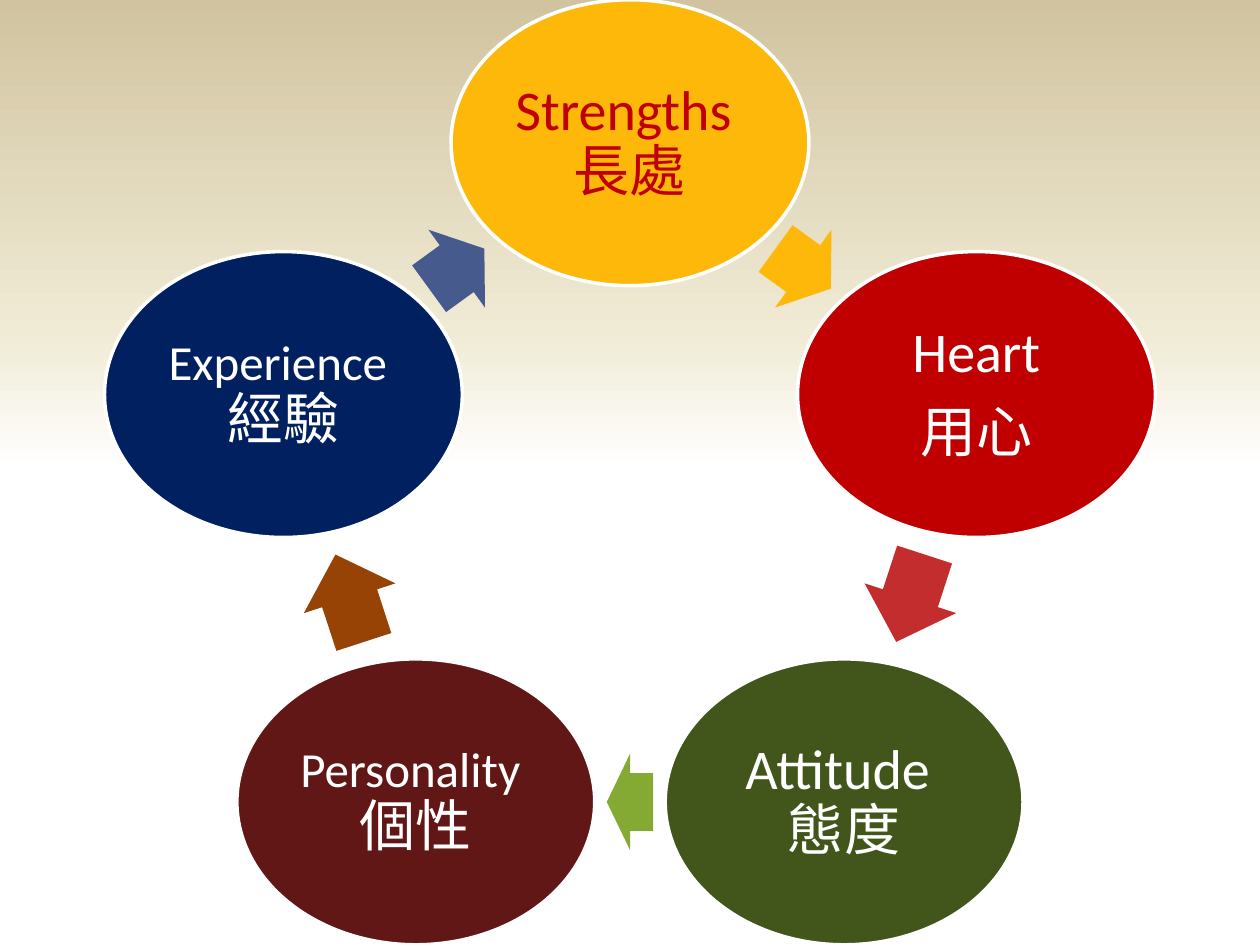
from copy import deepcopy
from math import cos, radians, sin

from pptx import Presentation
from pptx import util as u
from pptx.dml.color import RGBColor
from pptx.enum import shapes, text
from pptx.oxml.ns import qn

# Ring of five ovals, in points
MID_X, MID_Y, RADIUS = 360, 289.8, 208.2
OVAL_W, OVAL_H = 204.5, 163.4
ARROW_H = 55
STEP = 72

# Fill, text colour, paragraphs of lines, each line with its size
OVALS = [
    ("FEB80A", "C00000", [[("Strengths ", 32), ("長處", 32)]]),
    ("C00000", "FFFFFF", [[("Heart", 32)], [("用心", 32)]]),
    ("42551A", "FFFFFF", [[("Attitude ", 32), ("態度", 32)]]),
    ("621717", "FFFFFF", [[("Personality ", 28), ("個性", 32)]]),
    ("002060", "FFFFFF", [[("Experience ", 28), ("經驗", 32)]]),
]
# Fill and length of the arrow after each oval
ARROWS = [("FEB80A", 39), ("C32D2E", 52.5), ("84AA33", 26.5),
          ("964305", 52.5), ("475A8D", 39)]
STOPS = [(0.5, "FFFFFF"), (0.65, "F0EBD5"), (1, "D1C39F")]


def paint(color, code):
    color.rgb = RGBColor.from_string(code)


def add_back(slide):
    fill = slide.background.fill
    fill.gradient()
    fill.gradient_angle = 90
    # The default gradient has two stops; a third is needed
    stops = slide.element.find(".//" + qn("a:gsLst"))
    stops.append(deepcopy(stops[-1]))
    for stop, (place, code) in zip(fill.gradient_stops, STOPS):
        stop.position = place
        paint(stop.color, code)


def add_form(slide, kind, x, y, wide, high, code):
    """Add a plain filled shape centred on x, y."""
    form = slide.shapes.add_shape(
        kind, u.Pt(x - wide / 2), u.Pt(y - high / 2), u.Pt(wide), u.Pt(high))
    form.shadow.inherit = False
    form.fill.solid()
    paint(form.fill.fore_color, code)
    return form


def add_text(form, paras, code):
    frame = form.text_frame
    frame.word_wrap = True
    frame.vertical_anchor = text.MSO_ANCHOR.MIDDLE
    frame.margin_left = frame.margin_right = u.Pt(3)
    frame.margin_top = frame.margin_bottom = u.Pt(3)
    for i, lines in enumerate(paras):
        para = frame.add_paragraph() if i else frame.paragraphs[0]
        para.alignment = text.PP_ALIGN.CENTER
        para.line_spacing = 0.9
        para.space_after = u.Pt(11)
        for j, (words, size) in enumerate(lines):
            if j:
                para.add_line_break()
            run = para.add_run()
            run.text = words
            run.font.size = u.Pt(size)
            run.font.name = "Calibri"
            paint(run.font.color, code)


def add_oval(slide, x, y, code, ink, paras):
    oval = add_form(slide, shapes.MSO_SHAPE.OVAL, x, y, OVAL_W, OVAL_H, code)
    paint(oval.line.color, "FFFFFF")
    oval.line.width = u.Pt(2)
    add_text(oval, paras, ink)


def add_arrow(slide, x, y, turn, code, wide):
    arrow = add_form(slide, shapes.MSO_SHAPE.RIGHT_ARROW, x, y, wide, ARROW_H, code)
    arrow.line.fill.background()
    arrow.adjustments[0] = 0.6
    arrow.adjustments[1] = 0.5
    arrow.rotation = turn


def spot(i):
    """Centre of oval i, clockwise from the top."""
    angle = radians(STEP * i)
    return MID_X + RADIUS * sin(angle), MID_Y - RADIUS * cos(angle)


def main():
    deck = Presentation()
    deck.slide_width, deck.slide_height = u.Pt(720), u.Pt(540)
    slide = deck.slides.add_slide(deck.slide_layouts[6])
    add_back(slide)

    # Each oval is followed by an arrow halfway to the next one
    for i, (oval, arrow) in enumerate(zip(OVALS, ARROWS)):
        (x, y), (next_x, next_y) = spot(i), spot(i + 1)
        add_oval(slide, x, y, *oval)
        add_arrow(slide, (x + next_x) / 2, (y + next_y) / 2,
                  STEP / 2 + STEP * i, *arrow)

    deck.save("out.pptx")


if __name__ == "__main__":
    main()
